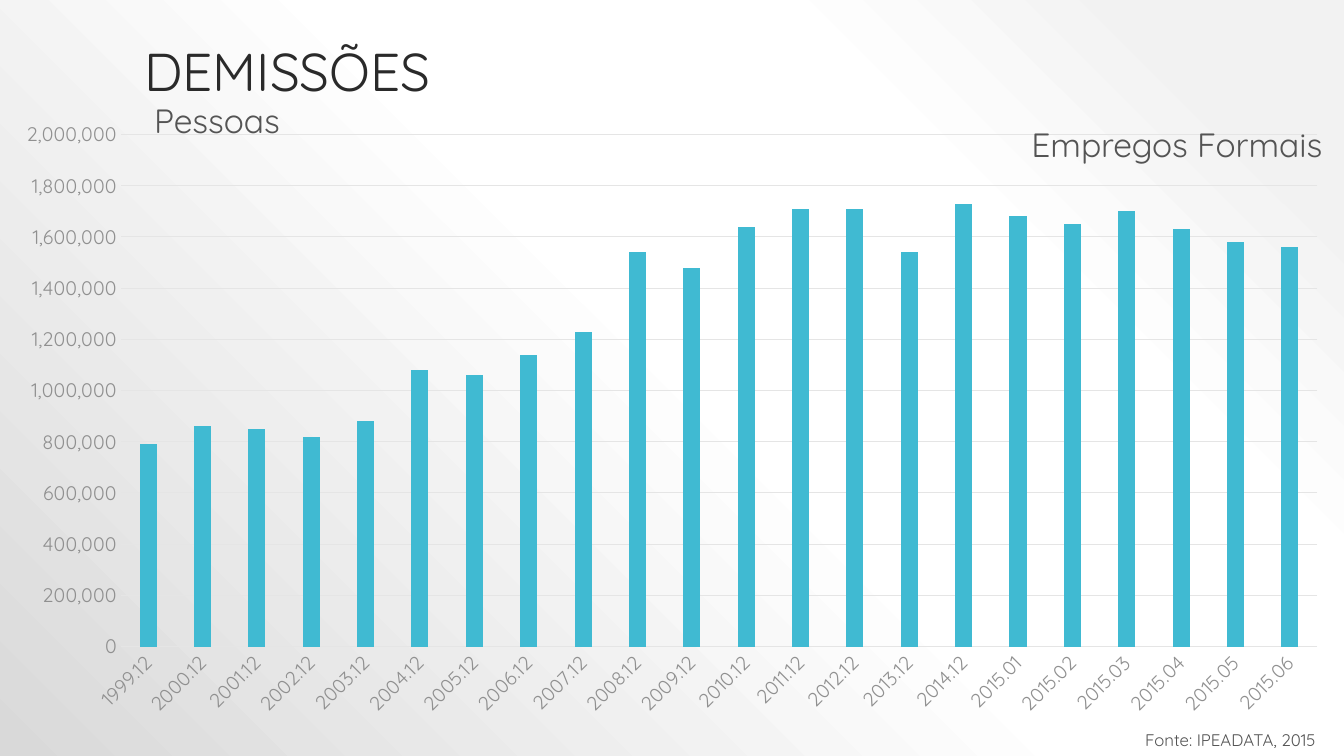
from pptx import Presentation
from pptx.chart.data import CategoryChartData
from pptx.dml.color import RGBColor
from pptx.enum.chart import XL_CHART_TYPE, XL_TICK_MARK
from pptx.enum.text import MSO_ANCHOR, MSO_AUTO_SIZE, PP_ALIGN
from pptx.oxml import parse_xml
from pptx.oxml.ns import nsdecls, qn
from pptx.util import Inches, Pt

COLUMNS = XL_CHART_TYPE.COLUMN_CLUSTERED
NO_TICK = XL_TICK_MARK.NONE
BOTTOM, TOP = MSO_ANCHOR.BOTTOM, MSO_ANCHOR.TOP
LEFT = PP_ALIGN.LEFT
GROW, FIXED = MSO_AUTO_SIZE.SHAPE_TO_FIT_TEXT, MSO_AUTO_SIZE.NONE

FONT = "Quicksand"
TITLE_COLOR = RGBColor(0x2A, 0x2A, 0x2A)
TEXT_COLOR = RGBColor(0x54, 0x54, 0x54)
AXIS_COLOR = RGBColor(0x90, 0x90, 0x90)
GRID_COLOR = RGBColor(0xE5, 0xE5, 0xE5)
BAR_COLOR = RGBColor(0x40, 0xBA, 0xD2)
BACKGROUND_STOPS = [
    (10, RGBColor(0xF2, 0xF2, 0xF2)),
    (28, RGBColor(0xFF, 0xFF, 0xFF)),
    (48, RGBColor(0xFF, 0xFF, 0xFF)),
    (100, RGBColor(0xD9, 0xD9, 0xD9)),
]

# Decembers of each year, then the first months of 2015
MONTHS = [f"{year}.12" for year in range(1999, 2015)]
MONTHS += [f"2015.{month:02}" for month in range(1, 7)]
DISMISSALS_IN_THOUSANDS = [
    790, 860, 850, 820, 880, 1080, 1060, 1140, 1230, 1540, 1480,
    1640, 1710, 1710, 1540, 1730, 1680, 1650, 1700, 1630, 1580, 1560,
]


def format_font(font, size, color):
    font.name = FONT
    font.size = Pt(size)
    font.color.rgb = color


def write_text(frame, text, size, color, anchor, auto_size):
    frame.auto_size = auto_size
    frame.vertical_anchor = anchor
    paragraph = frame.paragraphs[0]
    paragraph.alignment = LEFT
    paragraph.line_spacing = 0.9
    run = paragraph.add_run()
    run.text = text
    format_font(run.font, size, color)


def paint_background(slide):
    """Radial gradient centred on the top right corner."""
    fill = slide.background.fill
    fill.solid()
    stops = "".join(
        f'<a:gs pos="{position * 1000}"><a:srgbClr val="{color}"/></a:gs>'
        for position, color in BACKGROUND_STOPS
    )
    gradient = parse_xml(
        f'<a:gradFill {nsdecls("a")} rotWithShape="1"><a:gsLst>{stops}</a:gsLst>'
        '<a:path path="circle"><a:fillToRect l="100000" b="100000"/></a:path>'
        "</a:gradFill>"
    )
    properties = slide.background._cSld.bg.bgPr
    properties.replace(properties.find(qn("a:solidFill")), gradient)


def place_title(slide, left, top, width, height):
    title = slide.shapes.title
    title.left, title.top, title.width, title.height = left, top, width, height
    title.text_frame.word_wrap = True
    write_text(title.text_frame, "DEMISSÕES", 38, TITLE_COLOR, BOTTOM, FIXED)


def add_label(slide, text, size, left, top, width, height):
    label = slide.shapes.add_textbox(left, top, width, height)
    label.text_frame.word_wrap = False
    write_text(label.text_frame, text, size, TEXT_COLOR, TOP, GROW)


def style_axis(axis):
    axis.major_tick_mark = NO_TICK
    axis.minor_tick_mark = NO_TICK
    format_font(axis.tick_labels.font, 14, AXIS_COLOR)


def draw_gray_line(line):
    line.color.rgb = GRID_COLOR
    line.width = Pt(0.75)


def add_dismissals_chart(slide, left, top, width, height):
    data = CategoryChartData(number_format="#,##0")
    data.categories = MONTHS
    data.add_series("Series 1", [value * 1000 for value in DISMISSALS_IN_THOUSANDS])
    chart = slide.shapes.add_chart(COLUMNS, left, top, width, height, data).chart
    chart.has_legend = False
    chart.has_title = False
    format_font(chart.font, 14, TEXT_COLOR)

    # Columns
    plot = chart.plots[0]
    plot.vary_by_categories = False
    plot.gap_width = 219
    plot.overlap = -27
    fill = plot.series[0].format.fill
    fill.solid()
    fill.fore_color.rgb = BAR_COLOR

    # Month axis with slanted labels
    months = chart.category_axis
    style_axis(months)
    draw_gray_line(months.format.line)
    label_body = months._element.find(qn("c:txPr")).find(qn("a:bodyPr"))
    label_body.set("rot", "-2700000")
    label_body.set("vert", "horz")

    # People axis with gridlines
    people = chart.value_axis
    style_axis(people)
    people.minimum_scale = 0
    people.maximum_scale = 2000000
    people.major_unit = 200000
    people.tick_labels.number_format = "#,##0"
    people.tick_labels.number_format_is_linked = False
    people.format.line.fill.background()
    people.has_major_gridlines = True
    draw_gray_line(people.major_gridlines.format.line)

    # Plot area as shares of the chart
    layout = parse_xml(
        f'<c:layout {nsdecls("c")}><c:manualLayout><c:layoutTarget val="inner"/>'
        '<c:xMode val="edge"/><c:yMode val="edge"/><c:x val="0.09"/><c:y val="0.04"/>'
        '<c:w val="0.89"/><c:h val="0.83"/></c:manualLayout></c:layout>'
    )
    plot_area = chart._chartSpace.chart.plotArea
    for old_layout in plot_area.findall(qn("c:layout")):
        plot_area.remove(old_layout)
    plot_area.insert(0, layout)


def build_dismissals_slide(presentation):
    slide = presentation.slides.add_slide(presentation.slide_layouts[5])
    paint_background(slide)
    place_title(slide, Inches(1.33), Inches(0.3), Inches(10.67), Inches(0.77))
    add_dismissals_chart(slide, 0, Inches(1.09), presentation.slide_width, Inches(6.12))
    for text, size, *box in [
        ("Fonte: IPEADATA, 2015", 12, 11.26, 7.21, 2.02, 0.28),
        ("Empregos Formais", 24, 10.13, 1.23, 3.15, 0.46),
        ("Pessoas", 24, 1.43, 0.99, 1.47, 0.46),
    ]:
        add_label(slide, text, size, *map(Inches, box))


def main():
    presentation = Presentation()
    presentation.slide_width = Inches(13.33)
    presentation.slide_height = Inches(7.5)
    build_dismissals_slide(presentation)
    presentation.save("out.pptx")


if __name__ == "__main__":
    main()
